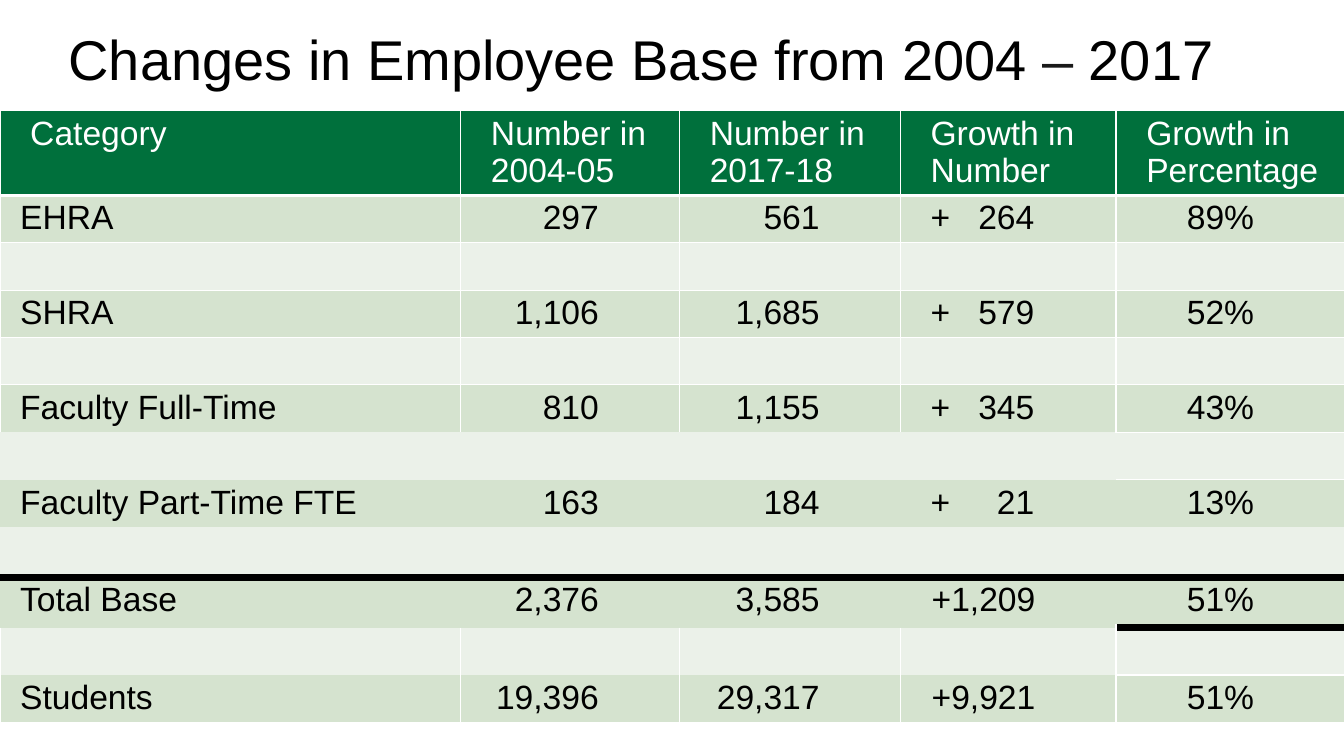
from lxml import etree
from pptx import Presentation
from pptx.dml.color import RGBColor
from pptx.enum.text import MSO_ANCHOR, MSO_AUTO_SIZE, PP_ALIGN
from pptx.oxml.ns import qn
from pptx.util import Inches, Pt

LEFT, RIGHT = PP_ALIGN.LEFT, PP_ALIGN.RIGHT
MIDDLE, NO_AUTOFIT = MSO_ANCHOR.MIDDLE, MSO_AUTO_SIZE.NONE

FONT = "Arial"
COLORS = {
    "text": "000000",
    "dash": "1A1A1A",
    "white": "FFFFFF",
    "header": "00703C",
    "band": "D5E3CF",
    "gap": "EBF1E9",
}
COL_WIDTHS = [4.57, 2.17, 2.19, 2.14, 2.27]
LAST_COL = len(COL_WIDTHS) - 1
HEADER = ["Category", "Number in 2004-05", "Number in 2017-18",
          "Growth in Number", "Growth in Percentage"]
DATA = [
    ["EHRA", "297", "561", "+\t264", "89%"],
    ["SHRA", "1,106", "1,685", "+\t579", "52%"],
    ["Faculty Full-Time", "810", "1,155", "+\t345", "43%"],
    ["Faculty Part-Time FTE", "163", "184", "+\t21", "13%"],
    ["Total Base", "2,376", "3,585", "+1,209", "51%"],
    ["Students", "19,396", "29,317", "+9,921", "51%"],
]
ROW_COUNT = 2 * len(DATA)
TOTAL_ROW = 9
OPEN_ROWS = range(6, TOTAL_ROW + 1)
THIN, THICK = ("white", 1), ("text", 6)


def add_run(p, text, size, color):
    r = p.add_run()
    r.text = text
    r.font.size = Pt(size)
    r.font.name = FONT
    r.font.color.rgb = RGBColor.from_string(COLORS[color])


def add_title(s):
    title = s.shapes.title
    title.left, title.top = Inches(0.58), Inches(0.13)
    title.width, title.height = Inches(12.17), Inches(0.97)
    tf = title.text_frame
    tf.auto_size = NO_AUTOFIT
    tf.vertical_anchor = MIDDLE
    p = tf.paragraphs[0]
    p.alignment = LEFT
    p.line_spacing = 0.9
    add_run(p, "Changes in Employee Base from 2004 ", 40, "text")
    add_run(p, "– ", 40, "dash")
    add_run(p, "2017", 40, "text")


def horizontal_border(edge, col):
    if edge == 1:
        return "white", 3
    if edge == TOTAL_ROW:
        return THICK
    if edge == TOTAL_ROW + 1:
        return THICK if col == LAST_COL else None
    if edge == 8 or (edge in (6, 7, 11) and col != LAST_COL):
        return None
    return THIN


def set_border(cell, side, border):
    ln = etree.SubElement(cell._tc.get_or_add_tcPr(), qn(f"a:ln{side}"))
    if border is None:
        ln.set("w", "0")
        etree.SubElement(ln, qn("a:noFill"))
        return
    color, width = border
    ln.set("w", str(Pt(width)))
    fill = etree.SubElement(ln, qn("a:solidFill"))
    etree.SubElement(fill, qn("a:srgbClr"), val=COLORS[color])


def style_cell(cell, row, col, fill):
    vertical = None if row in OPEN_ROWS else THIN
    outer = THIN if row in OPEN_ROWS and col == LAST_COL else vertical
    set_border(cell, "L", vertical)
    set_border(cell, "R", outer)
    set_border(cell, "T", horizontal_border(row, col))
    set_border(cell, "B", horizontal_border(row + 1, col))
    cell.fill.solid()
    cell.fill.fore_color.rgb = RGBColor.from_string(COLORS[fill])


def write_cell(cell, text, color, left, right, align):
    cell.margin_left, cell.margin_right = Inches(left), Inches(right)
    cell.margin_top = cell.margin_bottom = Inches(0.04)
    p = cell.text_frame.paragraphs[0]
    p.alignment = align
    add_run(p, text, 24, color)
    return p


def add_right_tab(p, position):
    tabs = etree.SubElement(p._p.get_or_add_pPr(), qn("a:tabLst"))
    etree.SubElement(tabs, qn("a:tab"), pos=str(Inches(position)), algn="r")


def write_value(cell, text, col):
    if col == 0:
        write_cell(cell, text, "text", 0.2, 0.1, LEFT)
    elif "\t" in text:
        p = write_cell(cell, text, "text", 0.3, 0.1, LEFT)
        add_right_tab(p, 1.03)
    else:
        right = 0.9 if col == LAST_COL else 0.8
        write_cell(cell, text, "text", 0.3, right, RIGHT)


def row_height(row):
    if row == 0:
        return 0.84
    return 0.5 if row in (TOTAL_ROW - 1, TOTAL_ROW) else 0.47


def add_employee_table(s):
    heights = [row_height(row) for row in range(ROW_COUNT)]
    frame = s.shapes.add_table(ROW_COUNT, len(COL_WIDTHS), Inches(0), Inches(1.1),
                               Inches(13.33), Inches(sum(heights)))
    table = frame.table
    for column, width in zip(table.columns, COL_WIDTHS):
        column.width = Inches(width)
    for row, height in enumerate(heights):
        table.rows[row].height = Inches(height)
        fill = "header" if row == 0 else "band" if row % 2 else "gap"
        for col in range(len(COL_WIDTHS)):
            cell = table.cell(row, col)
            style_cell(cell, row, col, fill)
            if row == 0:
                write_cell(cell, HEADER[col], "white", 0.3, 0.1, LEFT)
            elif row % 2:
                write_value(cell, DATA[row // 2][col], col)


def main():
    prs = Presentation()
    prs.slide_width, prs.slide_height = Inches(13.33), Inches(7.5)
    s = prs.slides.add_slide(prs.slide_layouts[5])
    add_title(s)
    add_employee_table(s)
    prs.save("out.pptx")


if __name__ == "__main__":
    main()
